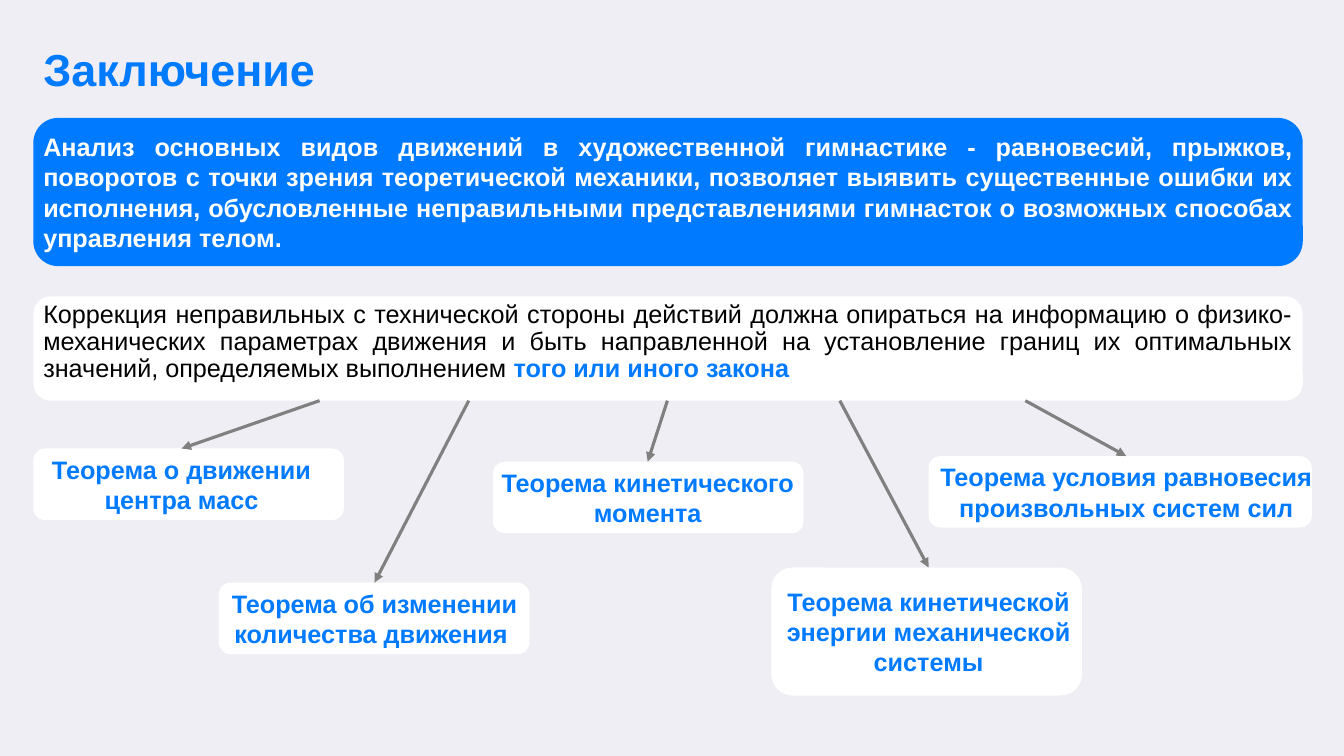
from pptx import Presentation
from pptx.dml.color import RGBColor
from pptx.enum.shapes import MSO_CONNECTOR, MSO_SHAPE
from pptx.enum.text import MSO_ANCHOR, PP_ALIGN
from pptx.oxml.ns import qn
from pptx.util import Inches, Pt
from lxml.etree import SubElement

BLUE = RGBColor(0x00, 0x7A, 0xFF)
WHITE = RGBColor(0xFF, 0xFF, 0xFF)
BLACK = RGBColor(0x00, 0x00, 0x00)
GRAY = RGBColor(0x80, 0x80, 0x80)
PALE = RGBColor(0xEE, 0xEE, 0xF4)

# Grid of 100 columns by 100 rows
WIDTH, HEIGHT = Inches(13.33), Inches(7.5)
LEFT, FULL = 2.48, 94.45
TITLE = (LEFT, 3.47, FULL, 12.13)
FINDING = (LEFT, 15.6, FULL, 19.6)
ADVICE = (LEFT, 39.2, FULL, 13.8)
CARD_W, CARD_H = 23.11, 9.47

FINDING_TEXT = (
    "Анализ основных видов движений в художественной гимнастике - равновесий, "
    "прыжков, поворотов с точки зрения теоретической механики, позволяет выявить "
    "существенные ошибки их исполнения, обусловленные неправильными "
    "представлениями гимнасток о возможных способах управления телом. ")
ADVICE_TEXT = (
    "Коррекция неправильных с технической стороны действий должна опираться на "
    "информацию о физико-механических параметрах движения и быть направленной на "
    "установление границ их оптимальных значений, определяемых выполнением ")

# Text, card box, label left and width, column where the arrow starts
THEOREMS = [
    ("Теорема о движении центра масс",
     (LEFT, 59.33, CARD_W, CARD_H), (1.43, 24.16), 23.78),
    ("Теорема об изменении количества движения ",
     (16.28, 77.07, CARD_W, CARD_H), (13.5, 28.73), 34.88),
    ("Теорема кинетического момента",
     (36.68, 61.07, CARD_W, CARD_H), (35.78, 24.83), 49.66),
    ("Теорема кинетической энергии механической системы",
     (57.39, 75.07, CARD_W, 16.93), (55.89, 26.41), 62.49),
    ("Теорема условия равновесия произвольных систем сил",
     (69.09, 60.33, 28.51, CARD_H), (68.94, 29.71), 76.29),
]


def col(n):
    return int(WIDTH * n / 100)


def row(n):
    return int(HEIGHT * n / 100)


def place(box):
    x, y, w, h = box
    return col(x), row(y), col(w), row(h)


def add_run(p, text, size=18, color=BLUE, bold=True):
    r = p.add_run()
    r.text = text
    r.font.name = "Arial"
    r.font.size = Pt(size)
    r.font.bold = bold
    r.font.color.rgb = color


def add_panel(s, box, fill=WHITE):
    sp = s.shapes.add_shape(MSO_SHAPE.ROUNDED_RECTANGLE, *place(box))
    sp.shadow.inherit = False
    sp.fill.solid()
    sp.fill.fore_color.rgb = fill
    sp.line.fill.background()


def add_label(s, box, text, align=PP_ALIGN.CENTER, anchor=MSO_ANCHOR.MIDDLE, **fmt):
    sp = s.shapes.add_textbox(*place(box))
    tf = sp.text_frame
    tf.word_wrap = True
    tf.vertical_anchor = anchor
    p = tf.paragraphs[0]
    p.alignment = align
    add_run(p, text, **fmt)
    return sp


def add_arrow(s, x, y, target):
    line = s.shapes.add_connector(MSO_CONNECTOR.STRAIGHT, col(x), row(y), 0, 0)
    line.end_connect(target, 0)
    line.line.color.rgb = GRAY
    line.line.width = Pt(2.25)
    SubElement(line.line._get_or_add_ln(), qn("a:tailEnd"), type="triangle")
    SubElement(line._element.spPr, qn("a:effectLst"))


def add_title(s, box, text):
    sp = s.shapes.title
    sp.left, sp.top, sp.width, sp.height = place(box)
    tf = sp.text_frame
    tf.vertical_anchor = MSO_ANCHOR.MIDDLE
    p = tf.paragraphs[0]
    p.alignment = PP_ALIGN.LEFT
    p.line_spacing = 0.9
    add_run(p, text, size=32)


def add_finding(s, box):
    add_panel(s, box, fill=BLUE)
    add_label(s, box, FINDING_TEXT, align=PP_ALIGN.JUSTIFY, color=WHITE)


def add_advice(s, box):
    add_panel(s, box)
    sp = add_label(s, box, ADVICE_TEXT, align=PP_ALIGN.JUSTIFY,
                   anchor=MSO_ANCHOR.TOP, color=BLACK, bold=False)
    p = sp.text_frame.paragraphs[0]
    p.line_spacing = 0.9
    add_run(p, "того или иного закона")


def add_theorem(s, text, box, label, start, top):
    add_panel(s, box)
    x, w = label
    sp = add_label(s, (x, box[1], w, box[3]), text)
    add_arrow(s, start, top, sp)


def main():
    prs = Presentation()
    prs.slide_width, prs.slide_height = WIDTH, HEIGHT
    s = prs.slides.add_slide(prs.slide_layouts[5])
    s.background.fill.solid()
    s.background.fill.fore_color.rgb = PALE

    add_title(s, TITLE, "Заключение")
    add_finding(s, FINDING)
    add_advice(s, ADVICE)
    for text, box, label, start in THEOREMS:
        add_theorem(s, text, box, label, start, top=ADVICE[1] + ADVICE[3])
    prs.save("out.pptx")


if __name__ == "__main__":
    main()
